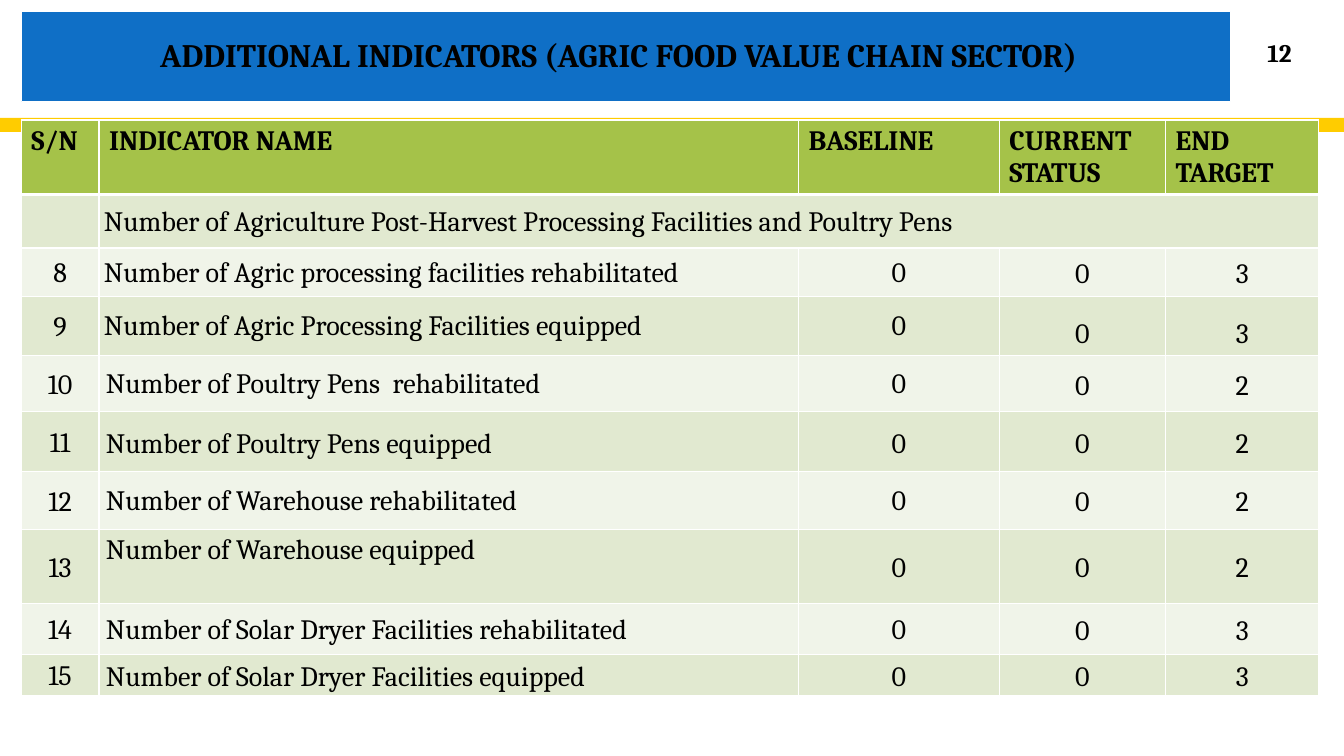
"""Build the slide of additional indicators for the agric food value chain."""
from dataclasses import dataclass

from lxml import etree
from pptx import Presentation
from pptx import util as u
from pptx.dml.color import RGBColor
from pptx.enum import shapes, text
from pptx.oxml import ns

FONT = "Cambria"
BLACK, WHITE, BLUE, GOLD = "000000", "FFFFFF", "0F6FC6", "FFCC00"
HEADER_GREEN, BAND_GREEN, PALE_GREEN = "A5C249", "E1E9D0", "F0F4E9"
WIDTH, HEIGHT = u.Inches(13.33), u.Inches(7.5)
LEFT, CENTER = text.PP_ALIGN.LEFT, text.PP_ALIGN.CENTER
TOP, MIDDLE = text.MSO_ANCHOR.TOP, text.MSO_ANCHOR.MIDDLE
COLUMNS = (5.78, 52.06, 14.93, 12.38, 11.4)
HEADINGS = ("S/N", "INDICATOR NAME", "BASELINE", "CURRENT STATUS", "END TARGET")
HEADER_ROW, GROUP_ROW = 9.73, 7.07
GROUP = "Number of Agriculture Post-Harvest Processing Facilities and Poultry Pens"


@dataclass
class Indicator:
    """One numbered indicator, with its row height as a share of the slide."""
    number: int
    name: str
    target: int
    height: float
    name_spacing: float = 1.07
    status_spacing: float = 1.15
    name_inset: float = 0.07
    name_anchor: text.MSO_ANCHOR = MIDDLE


INDICATORS = (
    Indicator(8, "Number of Agric processing facilities rehabilitated", 3, 6.4, name_inset=0.05),
    Indicator(9, "Number of Agric Processing Facilities equipped", 3, 7.87, 1, 1.5, 0.05),
    Indicator(10, "Number of Poultry Pens  rehabilitated", 2, 7.33),
    Indicator(11, "Number of Poultry Pens equipped", 2, 8, 1.15),
    Indicator(12, "Number of Warehouse rehabilitated", 2, 7.6),
    Indicator(13, "Number of Warehouse equipped", 2, 9.87, 1.15, name_anchor=TOP),
    Indicator(14, "Number of Solar Dryer Facilities rehabilitated", 3, 6.67),
    Indicator(15, "Number of Solar Dryer Facilities equipped", 3, 5.47, 1.15),
)


def across(percent: float) -> int:
    """Return a percentage of the slide's width."""
    return round(WIDTH * percent / 100)


def down(percent: float) -> int:
    """Return a percentage of the slide's height."""
    return round(HEIGHT * percent / 100)


def color(value: str) -> RGBColor:
    """Turn a hex string into a colour."""
    return RGBColor.from_string(value)


def paint(target, value: str) -> None:
    """Give a shape or cell a solid fill."""
    target.fill.solid()
    target.fill.fore_color.rgb = color(value)


def write(frame, words: str, *, size: float = 20, bold: bool = False,
          align=LEFT, spacing: float = 1) -> None:
    """Write one formatted paragraph in a text frame."""
    frame.word_wrap = True
    paragraph = frame.paragraphs[0]
    paragraph.alignment = align
    paragraph.line_spacing = spacing
    paragraph.space_before = u.Pt(0)
    paragraph.space_after = u.Pt(8 if spacing == 1.07 else 0)
    run = paragraph.add_run()
    run.text = words
    run.font.name, run.font.size, run.font.bold = FONT, u.Pt(size), bold
    run.font.color.rgb = color(BLACK)


def outline(cell, bottom: float) -> None:
    """Draw white borders round a cell, with a chosen bottom width in points."""
    properties = cell._tc.get_or_add_tcPr()
    for index, (side, width) in enumerate((("lnL", 1), ("lnR", 1), ("lnT", 1), ("lnB", bottom))):
        line = etree.Element(ns.qn(f"a:{side}"), w=str(u.Pt(width)))
        fill = etree.SubElement(line, ns.qn("a:solidFill"))
        etree.SubElement(fill, ns.qn("a:srgbClr"), val=WHITE)
        properties.insert(index, line)


def fill_cell(cell, words: str, *, inset: float = 0.07, anchor=MIDDLE, **format) -> None:
    """Write a body cell with narrow margins."""
    cell.margin_left = cell.margin_right = u.Inches(inset)
    cell.margin_top = u.Inches(0 if inset == 0.07 else 0.01)
    cell.margin_bottom = 0
    cell.vertical_anchor = anchor
    write(cell.text_frame, words, **format)


def add_indicator(table, row: int, item: Indicator) -> None:
    """Write one indicator in its table row."""
    number, name, baseline, status, target = (table.cell(row, column) for column in range(5))
    fill_cell(number, str(item.number), inset=0.01, align=CENTER, spacing=1.07)
    fill_cell(name, item.name, inset=item.name_inset, anchor=item.name_anchor,
              spacing=item.name_spacing)
    fill_cell(baseline, "0", align=CENTER, spacing=item.name_spacing)
    fill_cell(status, "0", align=CENTER, spacing=item.status_spacing)
    fill_cell(target, str(item.target), align=CENTER, spacing=item.status_spacing)


def add_indicator_table(slide) -> None:
    """Add the table of indicators."""
    heights = [HEADER_ROW, GROUP_ROW] + [item.height for item in INDICATORS]
    table = slide.shapes.add_table(len(heights), len(COLUMNS), across(1.58), down(15.87),
                                   across(sum(COLUMNS)), down(sum(heights))).table
    table.first_row = table.horz_banding = False
    for column, width in zip(table.columns, COLUMNS):
        column.width = across(width)
    for index, height in enumerate(heights):
        table.rows[index].height = down(height)
        for cell in table.rows[index].cells:
            paint(cell, HEADER_GREEN if index == 0 else BAND_GREEN if index % 2 else PALE_GREEN)
            outline(cell, 1 if index else 3)
    for column, heading in enumerate(HEADINGS):
        write(table.cell(0, column).text_frame, heading, bold=True)
    group = table.cell(1, 1)
    group.merge(table.cell(1, 4))
    fill_cell(group, GROUP, inset=0.05, spacing=1.07)
    for row, item in enumerate(INDICATORS, start=2):
        add_indicator(table, row, item)


def add_title(slide) -> None:
    """Format the title placeholder as the blue heading."""
    title = slide.shapes.title
    title.left, title.top = across(1.58), down(1.47)
    title.width, title.height = across(89.95), down(12)
    paint(title, BLUE)
    title.line.color.rgb, title.line.width = color(WHITE), u.Pt(0.75)
    title.text_frame.auto_size = text.MSO_AUTO_SIZE.NONE
    title.text_frame.vertical_anchor = MIDDLE
    write(title.text_frame, "ADDITIONAL INDICATORS (AGRIC FOOD VALUE CHAIN SECTOR)  ",
          size=23.4, bold=True, align=CENTER, spacing=0.9)


def main() -> None:
    """Build and save the presentation."""
    presentation = Presentation()
    presentation.slide_width, presentation.slide_height = WIDTH, HEIGHT
    slide = presentation.slides.add_slide(presentation.slide_layouts[5])
    band = slide.shapes.add_shape(shapes.MSO_SHAPE.RECTANGLE, 0, down(15.6), WIDTH, down(1.87))
    band.shadow.inherit = False
    paint(band, GOLD)
    band.line.fill.background()
    add_indicator_table(slide)
    page = slide.shapes.add_textbox(across(91.52), down(4.27), across(7.35), down(5.33))
    page.text_frame.vertical_anchor = MIDDLE
    write(page.text_frame, "12", size=18, bold=True, align=CENTER)
    add_title(slide)
    presentation.save("out.pptx")


if __name__ == "__main__":
    main()
